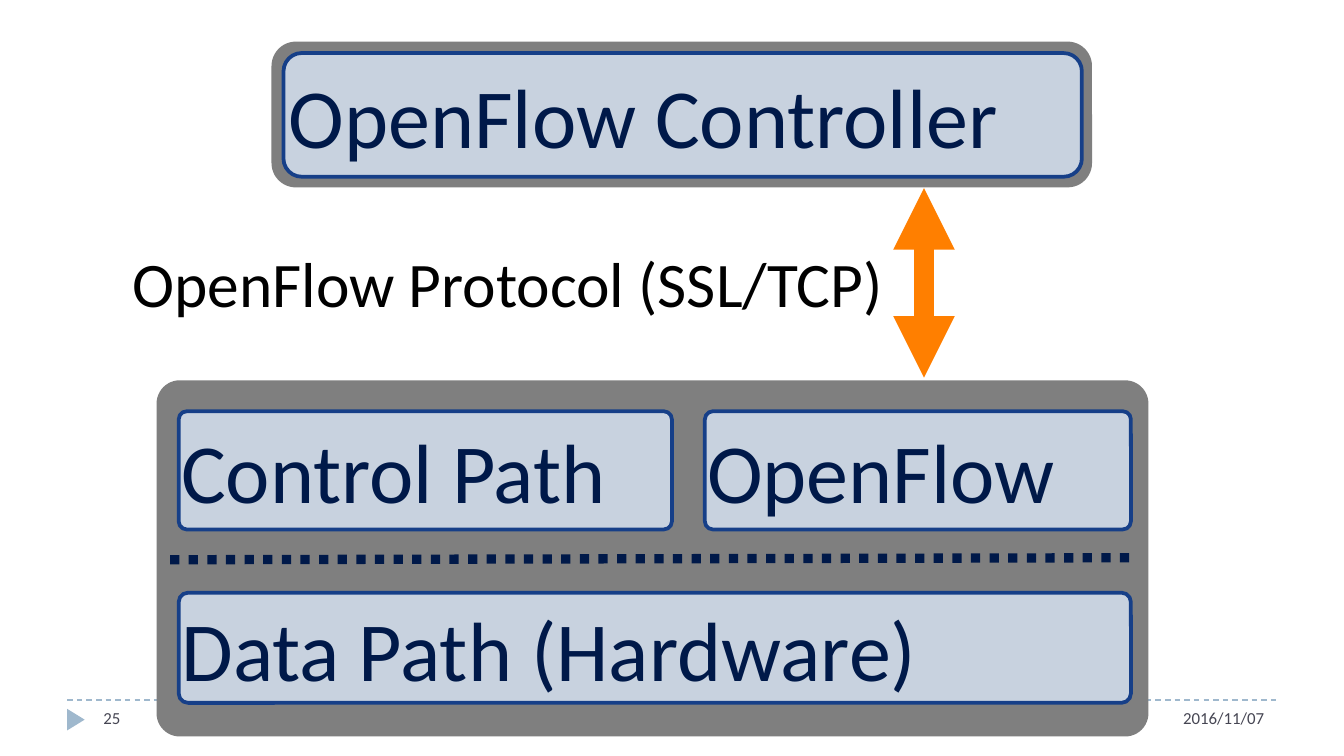
"""Build the OpenFlow switch architecture slide."""
from lxml import etree
from pptx import Presentation
from pptx import util as u
from pptx.dml.color import RGBColor
from pptx.enum import dml, shapes, text
from pptx.oxml.ns import qn

PX = 4572
FONT = "Calibri"
COLORS = {
    "chassis": "7F7F7F", "block": "C8D2DF", "edge": "163F88", "label": "001949",
    "link": "FF7F00", "caption": "000000", "footer": "464653", "accent": "9FB8CD",
}


def px(*lengths):
    """Turn px lengths into EMU."""
    return [u.Emu(length * PX) for length in lengths]


def color(name):
    """Look up a named colour."""
    return RGBColor.from_string(COLORS[name])


def write(shape, words, size, ink, align=text.PP_ALIGN.LEFT,
          anchor=text.MSO_ANCHOR.MIDDLE, margins=(0, 0), wrap=True):
    """Set and format one line of text in a shape."""
    frame = shape.text_frame
    frame.word_wrap = wrap
    frame.vertical_anchor = anchor
    frame.margin_left, frame.margin_top = px(*margins)
    frame.margin_right, frame.margin_bottom = px(*margins)
    frame.text = words
    paragraph = frame.paragraphs[0]
    paragraph.alignment = align
    font = paragraph.runs[0].font
    font.name, font.size, font.color.rgb = FONT, u.Pt(size), color(ink)


def add_filled(slide, kind, box, fill):
    """Add a flat borderless preset shape."""
    shape = slide.shapes.add_shape(kind, *px(*box))
    shape.shadow.inherit = False
    shape.fill.solid()
    shape.fill.fore_color.rgb = color(fill)
    shape.line.fill.background()
    return shape


def add_chassis(slide, box, rounding):
    """Add a grey rounded housing."""
    chassis = add_filled(slide, shapes.MSO_SHAPE.ROUNDED_RECTANGLE, box, "chassis")
    chassis.adjustments[0] = rounding


def add_block(slide, box, rounding, words):
    """Add a labelled component block."""
    block = add_filled(slide, shapes.MSO_SHAPE.ROUNDED_RECTANGLE, box, "block")
    block.adjustments[0] = rounding
    block.line.color.rgb = color("edge")
    block.line.width = u.Pt(2)
    write(block, words, 45, "label")


def add_line(slide, ends, ink, width, dash=None):
    """Add a straight line without a shadow."""
    line = slide.shapes.add_connector(shapes.MSO_CONNECTOR.STRAIGHT, *px(*ends))
    line.line.color.rgb = color(ink)
    line.line.width = u.Pt(width)
    if dash:
        line.line.dash_style = dash
    etree.SubElement(line._element.spPr, qn("a:effectLst"))
    return line


def add_footer(slide, box, number, date):
    """Add the footer rule, marker, slide number and date."""
    left, top, width, height = box
    right = left + width
    add_line(slide, (left, top, right, top), "accent", 0.75, dml.MSO_LINE.DASH)
    marker = add_filled(slide, shapes.MSO_SHAPE.ISOSCELES_TRIANGLE,
                        (left - 3, top + 16, 32, 26), "accent")
    marker.rotation = 90
    for words, start, span, align in (
        (date, right - 333, 334, text.PP_ALIGN.RIGHT),
        (number, left + 34, 216, text.PP_ALIGN.LEFT),
    ):
        note = slide.shapes.add_textbox(*px(start, top + 1, span, height))
        write(note, words, 9, "footer", align, text.MSO_ANCHOR.TOP, (20, 10))


def add_switch(slide, box):
    """Add the switch with its control and data paths."""
    left, top, width, height = box
    add_chassis(slide, box, 0.065)
    add_block(slide, (left + 33, top + 316, 1417, 164), 0.085,
              "Data Path (Hardware)")
    add_line(slide, (left + 20, top + 267, left + 1450, top + 264),
             "label", 5, dml.MSO_LINE.ROUND_DOT)
    for words, offset, span in (("Control Path", 33, 734), ("OpenFlow", 816, 634)):
        add_block(slide, (left + offset, top + 46, span, 176), 0.069, words)


def add_controller(slide, box):
    """Add the controller in its housing."""
    left, top, width, height = box
    add_chassis(slide, box, 0.167)
    add_block(slide, (left + 18, top + 17, width - 33, height - 33), 0.147,
              "OpenFlow Controller")


def add_protocol(slide, box):
    """Add the protocol caption and its two-way arrow."""
    left, top, width, height = box
    right = left + width
    arrow = add_line(slide, (right, top, right, top + height), "link", 11)
    outline = arrow.line._get_or_add_ln()
    for end in ("a:headEnd", "a:tailEnd"):
        etree.SubElement(outline, qn(end), type="triangle")
    caption = slide.shapes.add_textbox(*px(left, top + 83, 1130, 114))
    write(caption, "OpenFlow Protocol (SSL/TCP)", 34, "caption", wrap=False)
    caption.text_frame.auto_size = text.MSO_AUTO_SIZE.SHAPE_TO_FIT_TEXT


def main():
    """Build and save the slide."""
    deck = Presentation()
    deck.slide_width, deck.slide_height = px(2000, 1125)
    slide = deck.slides.add_slide(deck.slide_layouts[6])
    add_footer(slide, (100, 1042, 1800, 60), "25", "2016/11/07")
    add_switch(slide, (233, 566, 1476, 530))
    add_controller(slide, (404, 62, 1221, 217))
    add_protocol(slide, (197, 280, 1178, 282))
    deck.save("out.pptx")


if __name__ == "__main__":
    main()
